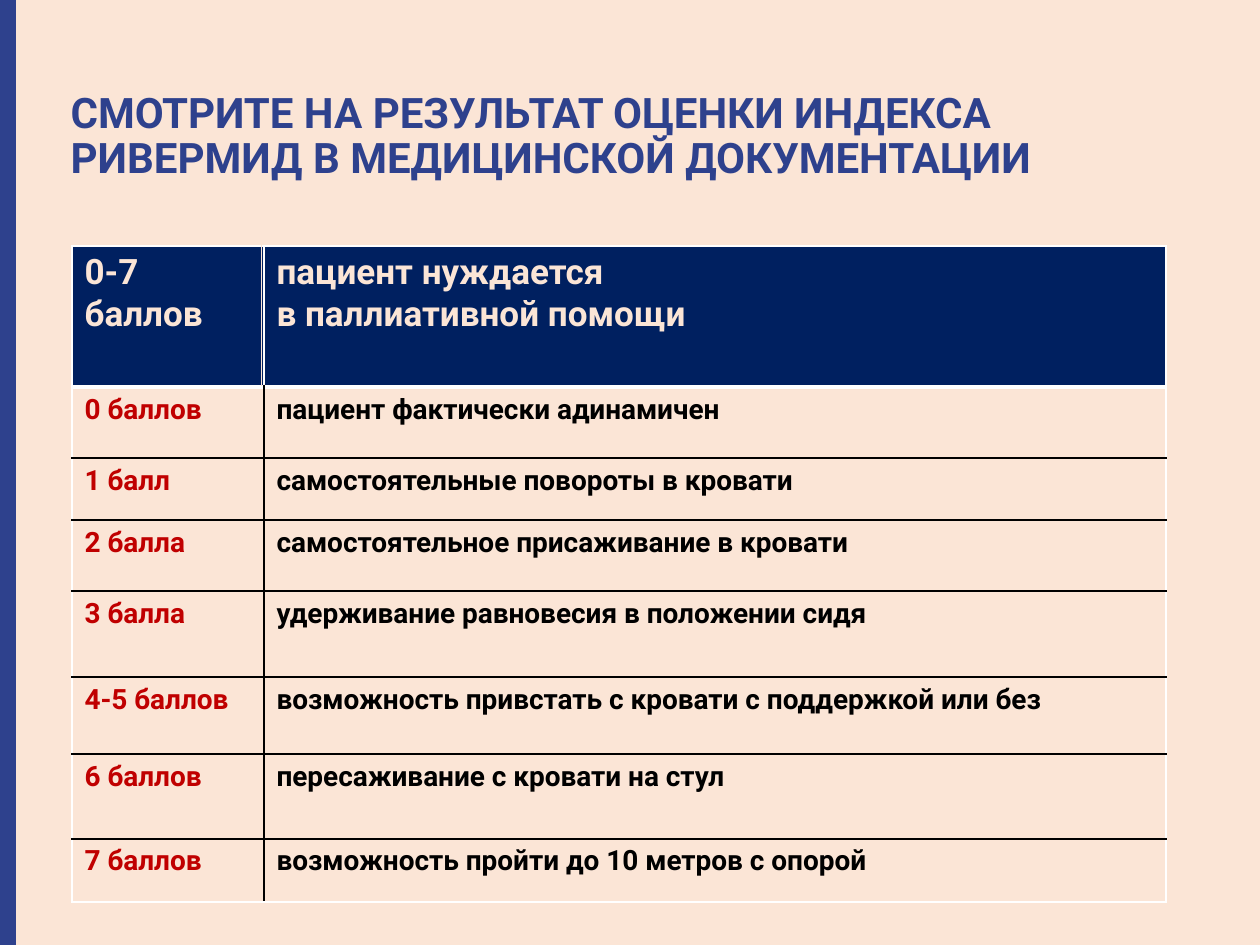
from typing import NamedTuple

from lxml.etree import SubElement
from pptx import Presentation
from pptx.dml.color import RGBColor
from pptx.enum.shapes import MSO_CONNECTOR, MSO_SHAPE
from pptx.enum.text import MSO_ANCHOR, PP_ALIGN
from pptx.oxml import parse_xml
from pptx.oxml.ns import nsdecls, qn
from pptx.util import Pt

PX = 914400 // 126
COLORS = {
    "background": "FBE5D6",
    "accent": "2E418D",
    "header": "002060",
    "score": "C00000",
    "text": "000000",
    "white": "FFFFFF",
}
FONT = "Roboto"
TITLE = "СМОТРИТЕ НА РЕЗУЛЬТАТ ОЦЕНКИ ИНДЕКСА РИВЕРМИД В МЕДИЦИНСКОЙ ДОКУМЕНТАЦИИ"
TABLE_LEFT, TABLE_TOP = 72, 246
COL_WIDTHS = (192, 902)


class Row(NamedTuple):
    height: int
    score: str
    meaning: str


ROWS = (
    Row(141, "0-7 баллов", "пациент нуждается\nв паллиативной помощи"),
    Row(71, "0 баллов", "пациент фактически адинамичен"),
    Row(62, "1 балл", "самостоятельные повороты в кровати"),
    Row(71, "2 балла", "самостоятельное присаживание в кровати"),
    Row(86, "3 балла", "удерживание равновесия в положении сидя"),
    Row(77, "4-5 баллов", "возможность привстать с кровати с поддержкой или без"),
    Row(85, "6 баллов", "пересаживание с кровати на стул"),
    Row(63, "7 баллов", "возможность пройти до 10 метров с опорой"),
)


def rgb(name: str) -> RGBColor:
    return RGBColor.from_string(COLORS[name])


def write(tf, text: str, *, size: int, color: str, spacing: float = 1.0) -> None:
    """Write bold text, one paragraph per line."""
    for i, line in enumerate(text.split("\n")):
        p = tf.add_paragraph() if i else tf.paragraphs[0]
        p.alignment = PP_ALIGN.LEFT
        p.line_spacing = spacing
        r = p.add_run()
        r.text = line
        r.font.name = FONT
        r.font.size = Pt(size)
        r.font.bold = True
        r.font.color.rgb = rgb(color)


def set_borders(cell, **sides: tuple[str, int]) -> None:
    """Set sides L, R, T and B, given in that order as (color, points)."""
    tc_pr = cell._tc.get_or_add_tcPr()
    for i, (side, (color, width)) in enumerate(sides.items()):
        tc_pr.insert(i, parse_xml(
            f'<a:ln{side} {nsdecls("a")} w="{Pt(width)}"><a:solidFill>'
            f'<a:srgbClr val="{COLORS[color]}"/></a:solidFill></a:ln{side}>'
        ))


def add_title(slide) -> None:
    sp = slide.shapes.title
    sp.left, sp.top, sp.width, sp.height = (v * PX for v in (58, 86, 1121, 126))
    sp.text_frame.vertical_anchor = MSO_ANCHOR.TOP
    write(sp.text_frame, TITLE, size=24, color="accent", spacing=0.9)


def add_side_bar(slide, height: int) -> None:
    sp = slide.shapes.add_shape(MSO_SHAPE.RECTANGLE, 0, 0, 16 * PX, height)
    sp.shadow.inherit = False
    sp.fill.solid()
    sp.fill.fore_color.rgb = rgb("accent")
    sp.line.fill.background()


def add_score_table(slide) -> None:
    height = sum(row.height for row in ROWS)
    table = slide.shapes.add_table(
        len(ROWS), len(COL_WIDTHS), TABLE_LEFT * PX, TABLE_TOP * PX,
        sum(COL_WIDTHS) * PX, height * PX,
    ).table
    table.first_row = table.horz_banding = False
    for col, width in zip(table.columns, COL_WIDTHS):
        col.width = width * PX

    last = len(ROWS) - 1
    for i, row in enumerate(ROWS):
        table.rows[i].height = row.height * PX
        header = i == 0
        inner = ("white" if header else "text", 1)
        outer = ("white", 1)
        top = ("white", 3) if i == 1 else outer if header else inner
        bottom = ("white", 3) if header else outer if i == last else inner
        for j, text in enumerate((row.score, row.meaning)):
            cell = table.cell(i, j)
            if header:
                cell.fill.solid()
                cell.fill.fore_color.rgb = rgb("header")
            else:
                cell.fill.background()
            set_borders(cell, L=inner if j else outer, R=outer if j else inner,
                        T=top, B=bottom)
            color = "background" if header else "text" if j else "score"
            write(cell.text_frame, text, size=20 if header else 16, color=color)


def add_header_divider(slide) -> None:
    x = (TABLE_LEFT + COL_WIDTHS[0] - 3) * PX
    bottom = TABLE_TOP + ROWS[0].height - 1
    line = slide.shapes.add_connector(
        MSO_CONNECTOR.STRAIGHT, x, (TABLE_TOP - 1) * PX, x, bottom * PX)
    line.line.color.rgb = rgb("background")
    line.line.width = Pt(0.5)
    SubElement(line._element.spPr, qn("a:effectLst"))


def main() -> None:
    prs = Presentation()
    prs.slide_width, prs.slide_height = 1260 * PX, 945 * PX
    slide = prs.slides.add_slide(prs.slide_layouts[5])
    slide.background.fill.solid()
    slide.background.fill.fore_color.rgb = rgb("background")
    add_side_bar(slide, prs.slide_height)
    add_title(slide)
    add_score_table(slide)
    add_header_divider(slide)
    prs.save("out.pptx")


if __name__ == "__main__":
    main()
